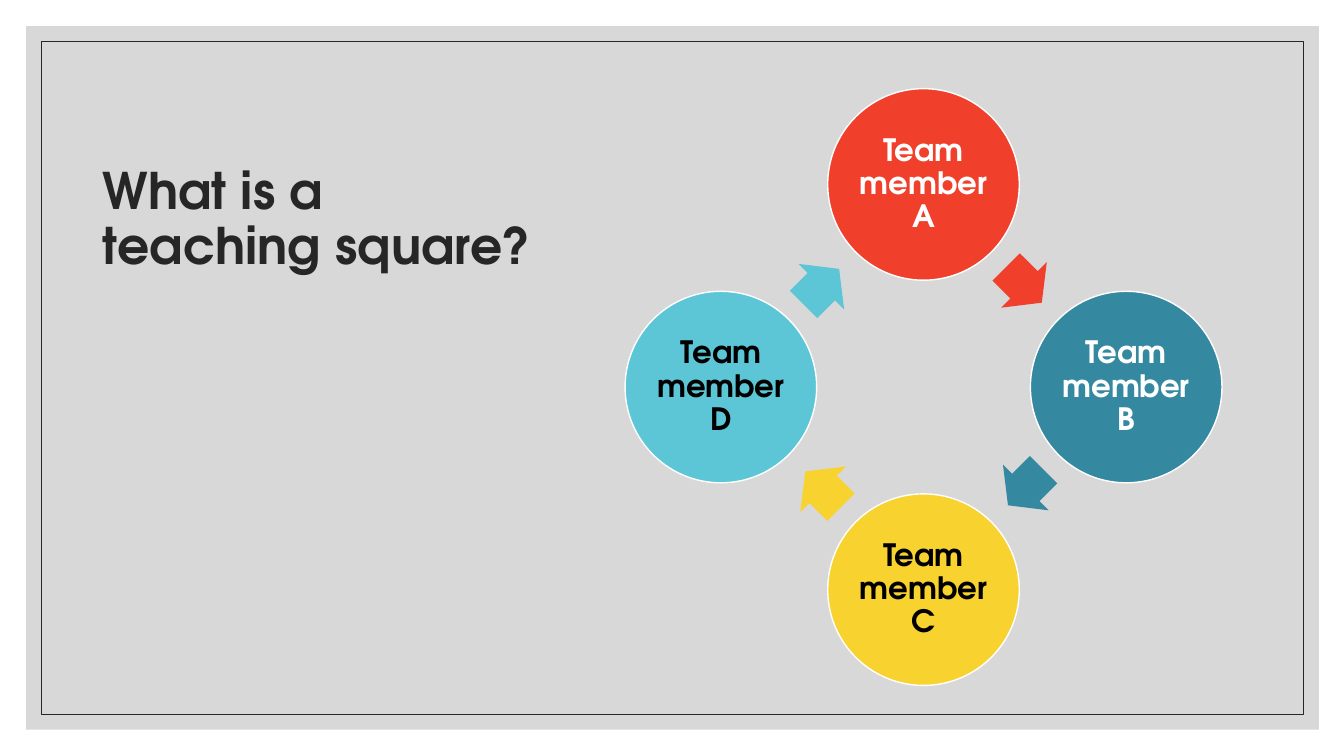
from math import cos, radians, sin

from lxml.etree import SubElement
from pptx import Presentation
from pptx.dml.color import RGBColor as Rgb
from pptx.enum.shapes import MSO_SHAPE as Kind
from pptx.enum.text import MSO_ANCHOR as Anchor, MSO_AUTO_SIZE as Fit, PP_ALIGN as Align
from pptx.oxml.ns import qn
from pptx.util import Inches, Pt

COLORS = {
    "panel": "BFBFBF", "ink": "262626", "white": "FFFFFF", "black": "000000",
    "red": "F03F2B", "blue": "3488A0", "gold": "F8D22F", "aqua": "5CC6D6",
}


def rgb(name):
    return Rgb.from_string(COLORS[name])


def write(shape, text, size, color, font, align=Align.LEFT, inset=None):
    frame = shape.text_frame
    frame.word_wrap = True
    frame.auto_size = Fit.NONE
    frame.vertical_anchor = Anchor.MIDDLE
    if inset is not None:
        frame.margin_left = frame.margin_right = Inches(inset)
        frame.margin_top = frame.margin_bottom = Inches(inset)
    para = frame.paragraphs[0]
    para.alignment = align
    para.line_spacing = 0.9
    run = para.add_run()
    run.text = text
    run.font.name = font
    run.font.size = Pt(size)
    run.font.bold = True
    run.font.color.rgb = rgb(color)


class Deck:
    font = "TeX Gyre Adventor"

    def __init__(self, slide):
        self.slide = slide

    def shape(self, kind, x, y, w, h, fill=None, line=None, width=1, alpha=None):
        item = self.slide.shapes.add_shape(kind, Inches(x), Inches(y), Inches(w), Inches(h))
        item.shadow.inherit = False
        if fill:
            item.fill.solid()
            item.fill.fore_color.rgb = rgb(fill)
        else:
            item.fill.background()
        if alpha:
            tint = item.fill._xPr.find(qn("a:solidFill"))[0]
            SubElement(tint, qn("a:alpha")).set("val", str(alpha * 1000))
        if line:
            item.line.color.rgb = rgb(line)
            item.line.width = Pt(width)
        else:
            item.line.fill.background()
        return item

    def title(self, text, x, y, w, h):
        item = self.slide.shapes.title
        item.left, item.top, item.width, item.height = map(Inches, (x, y, w, h))
        write(item, text, 36, "ink", self.font)
        # Bring the title in front of the panel
        self.slide.shapes._spTree.append(item._element)

    def circle(self, text, x, y, size, fill, color):
        item = self.shape(Kind.OVAL, x - size / 2, y - size / 2, size, size, fill, "white")
        write(item, text, 22, color, self.font, Align.CENTER, 0.03)

    def arrow(self, x, y, w, h, turn, fill):
        item = self.shape(Kind.RIGHT_ARROW, x - w / 2, y - h / 2, w, h, fill)
        item.adjustments[0] = 0.6
        item.adjustments[1] = 0.5
        item.rotation = turn


def main():
    prs = Presentation()
    prs.slide_width, prs.slide_height = Inches(13.33), Inches(7.5)
    deck = Deck(prs.slides.add_slide(prs.slide_layouts[5]))

    # Panel and frame
    deck.shape(Kind.RECTANGLE, 0.26, 0.26, 12.82, 6.98, "panel", alpha=60)
    deck.shape(Kind.RECTANGLE, 0.41, 0.41, 12.52, 6.68, line="ink", width=0.5)

    # Title
    deck.title("What is a teaching square?", 0.92, 1.44, 4.45, 1.5)

    # Cycle: members clockwise from the top, each followed by an arrow
    mid_x, mid_y, reach = 9.16, 3.84, 2.01
    gap = reach * cos(radians(45))
    team = [("A", "red", "white"), ("B", "blue", "white"),
            ("C", "gold", "black"), ("D", "aqua", "black")]
    for step, (name, fill, color) in enumerate(team):
        turn = radians(90 * step - 90)
        deck.circle(f"Team member {name}", mid_x + reach * cos(turn),
                    mid_y + reach * sin(turn), 1.9, fill, color)
        turn += radians(44.5)
        deck.arrow(mid_x + gap * cos(turn), mid_y + gap * sin(turn),
                   0.5, 0.64, 45 + 90 * step, fill)

    prs.save("out.pptx")


if __name__ == "__main__":
    main()
